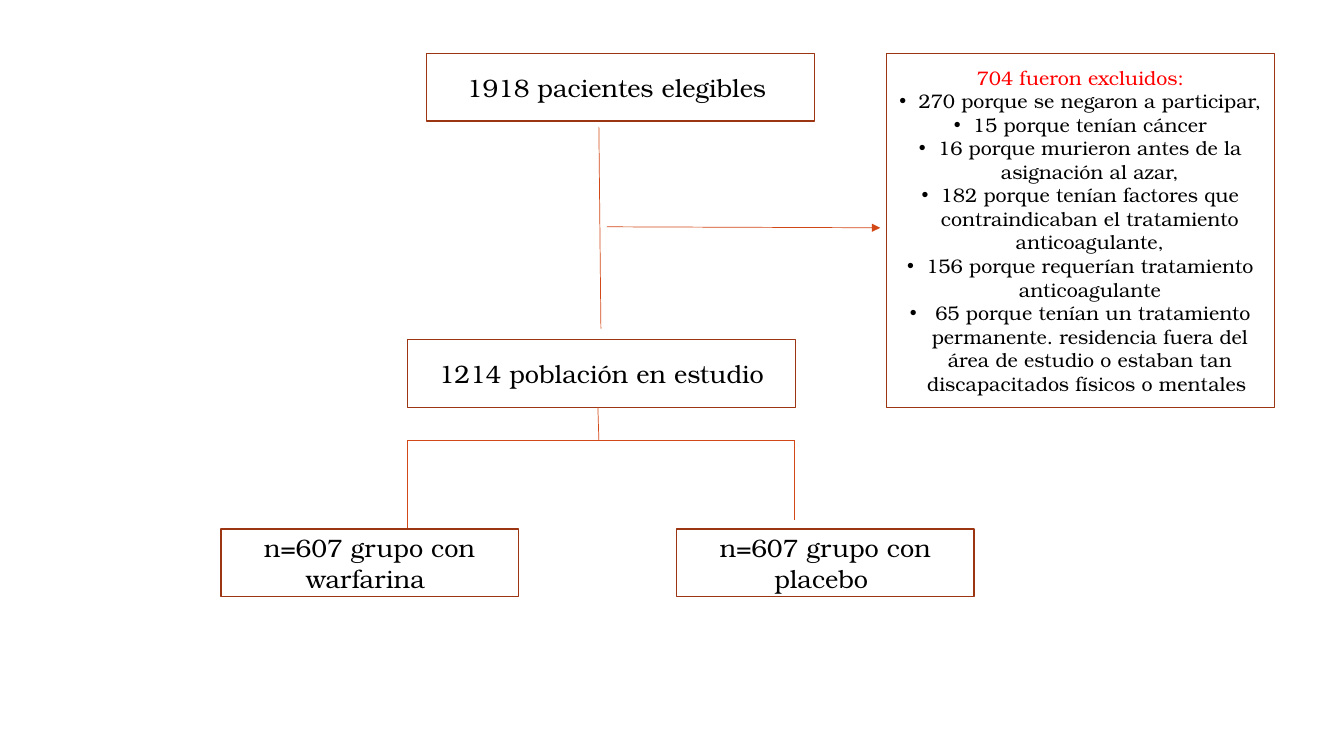
from pptx import Presentation
from pptx.dml.color import RGBColor as RGB
from pptx.enum.shapes import MSO_CONNECTOR as Conn, MSO_SHAPE as Shape
from pptx.enum.text import MSO_ANCHOR as Anchor, PP_ALIGN as Align
from pptx.oxml.ns import qn
from pptx.util import Pt
from lxml.etree import SubElement as Sub

PX = 9144  # 100 px to the inch
FONT = "TeX Gyre Bonum"
WHITE = RGB(255, 255, 255)
BLACK = RGB(0, 0, 0)
RED = RGB(255, 0, 0)
BROWN = RGB(0x9C, 0x35, 0x11)
ORANGE = RGB(0xD3, 0x48, 0x17)
INDENT = 19

REASONS = [
    "270 porque se negaron a participar,",
    "15 porque tenían cáncer",
    "16 porque murieron antes de la asignación al azar,",
    "182 porque tenían factores que contraindicaban el tratamiento anticoagulante,",
    "156 porque requerían tratamiento anticoagulante",
    " 65 porque tenían un tratamiento permanente. residencia fuera del área de "
    "estudio o estaban tan discapacitados físicos o mentales ",
]


def write(para, text, size=18, color=BLACK, bullet=False):
    para.alignment = Align.CENTER
    if bullet:
        props = para._p.get_or_add_pPr()
        props.set("marL", str(INDENT * PX))
        props.set("indent", str(-INDENT * PX))
        Sub(props, qn("a:buFont")).set("typeface", "Arial")
        Sub(props, qn("a:buChar")).set("char", "•")
    run = para.add_run()
    run.text = text
    run.font.name = FONT
    run.font.size = Pt(size)
    run.font.color.rgb = color


def frame(slide, box):
    shape = slide.shapes.add_shape(Shape.FLOWCHART_PROCESS, *(n * PX for n in box))
    shape.shadow.inherit = False
    shape.fill.solid()
    shape.fill.fore_color.rgb = WHITE
    shape.line.color.rgb = BROWN
    shape.line.width = Pt(1)
    text = shape.text_frame
    text.word_wrap = True
    text.vertical_anchor = Anchor.MIDDLE
    return text


def step(slide, box, text):
    write(frame(slide, box).paragraphs[0], text)


def link(slide, *ends, arrow=False):
    line = slide.shapes.add_connector(Conn.STRAIGHT, *(n * PX for n in ends))
    line.line.color.rgb = ORANGE
    line.line.width = Pt(0.5)
    props = line._element.spPr
    if arrow:
        Sub(props.find(qn("a:ln")), qn("a:tailEnd")).set("type", "triangle")
    Sub(props, qn("a:effectLst"))


def excluded(slide, box):
    text = frame(slide, box)
    write(text.paragraphs[0], " 704 fueron excluidos: ", size=14, color=RED)
    for reason in REASONS:
        write(text.add_paragraph(), reason, size=14, bullet=True)


def fork(slide, box):
    """Stem from the study population, crossbar and two branches."""
    left, top, width, height = box
    right, bar, stem = left + width, top + 33, left + 190
    link(slide, stem, bar, stem - 1, top)
    link(slide, left, bar, right, bar)
    link(slide, left, top + height, left, bar)
    link(slide, right, top + height - 9, right, bar)


def flow(slide, box):
    left, top, width, height = box
    wide, slim, tall = 385, 295, 67
    mid, low = top + 284, top + 472
    # Eligible patients and exclusions
    step(slide, (left + 204, top, wide, tall), "1918 pacientes elegibles ")
    link(slide, left + 377, top + 273, left + 375, top + 73)
    link(slide, left + 383, top + 172, left + 654, top + 173, arrow=True)
    excluded(slide, (left + width - wide, top, wide, mid + tall - top))
    # Study population and its two groups
    step(slide, (left + 185, mid, wide, tall), "1214 población en estudio")
    fork(slide, (left + 185, mid + tall, wide - 1, low - mid - tall))
    for x, name in ((left, "warfarina"), (left + 452, "placebo")):
        step(slide, (x, low, slim, tall), f"n=607 grupo con {name} ")


def main():
    deck = Presentation()
    deck.slide_width, deck.slide_height = 1333 * PX, 750 * PX
    slide = deck.slides.add_slide(deck.slide_layouts[6])
    flow(slide, (219, 53, 1045, 539))
    deck.save("out.pptx")


if __name__ == "__main__":
    main()
